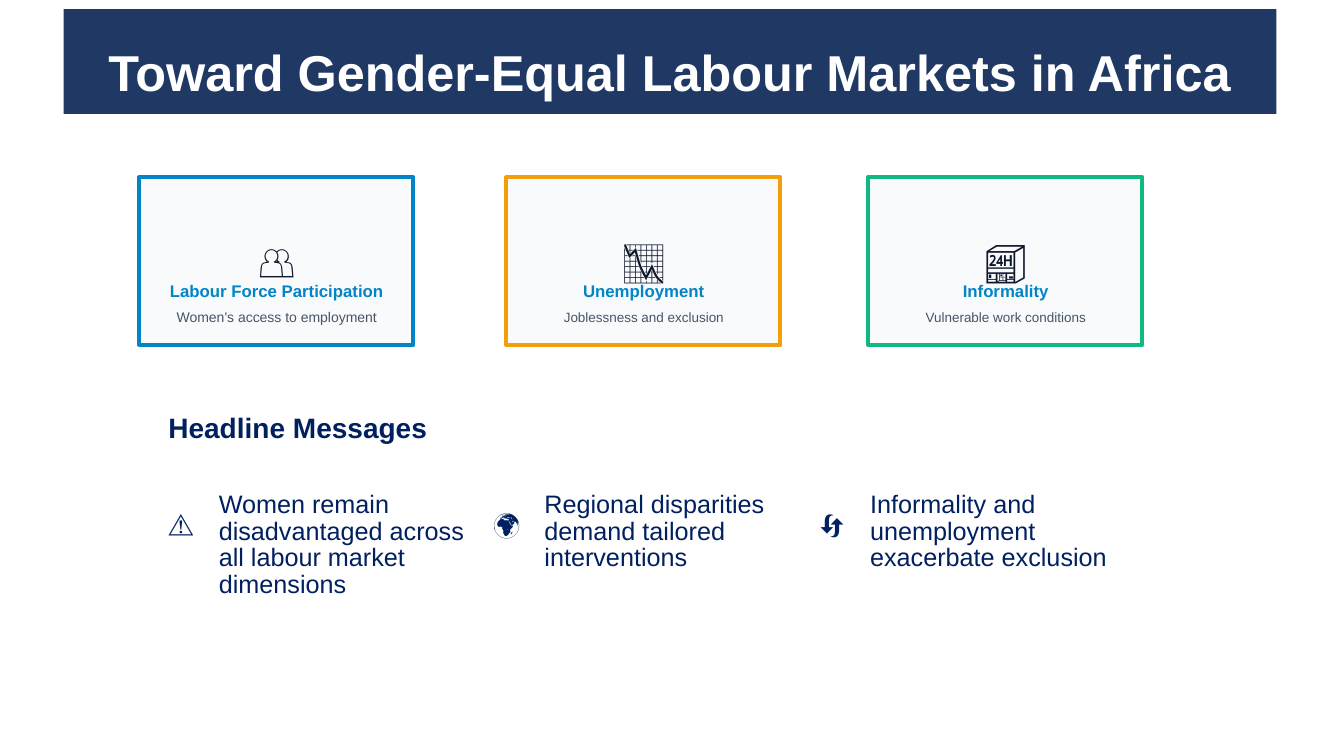
from lxml.etree import SubElement
from pptx import Presentation
from pptx.dml.color import RGBColor
from pptx.enum.shapes import MSO_SHAPE
from pptx.enum.text import MSO_ANCHOR, MSO_AUTO_SIZE, PP_ALIGN
from pptx.oxml.ns import qn
from pptx.util import Emu, Pt

EMU_PER_PX = 9144  # 100 px to the inch
NAVY, SKY, SLATE, INK = "002060", "0284C7", "475569", "0F172A"


def px(length):
    return Emu(length * EMU_PER_PX)


def colour(hex_value):
    return RGBColor.from_string(hex_value)


class SlideBuilder:
    font_name = "Arial"

    def __init__(self, deck):
        self.slide = deck.slides.add_slide(deck.slide_layouts[5])

    def set_text(self, frame, text, size, hue, leading, bold=False,
                 align=PP_ALIGN.LEFT, inset=0, anchor=MSO_ANCHOR.TOP):
        margins = {f"margin_{side}": px(inset) for side in ("left", "top", "right", "bottom")}
        frame.text = text
        paragraph = frame.paragraphs[0]
        formats = (
            (frame, {"word_wrap": True, "auto_size": MSO_AUTO_SIZE.NONE,
                     "vertical_anchor": anchor, **margins}),
            (paragraph, {"alignment": align, "line_spacing": Pt(leading)}),
            (paragraph.runs[0].font, {"name": self.font_name, "size": Pt(size), "bold": bold}),
        )
        for target, values in formats:
            for attribute, value in values.items():
                setattr(target, attribute, value)
        paragraph.runs[0].font.color.rgb = colour(hue)

    def title(self, text, box, fill):
        banner = self.slide.shapes.title
        for attribute, value in zip(("left", "top", "width", "height"), box):
            setattr(banner, attribute, px(value))
        outline = SubElement(banner.element.spPr, qn("a:prstGeom"), prst="roundRect")
        SubElement(outline, qn("a:avLst"))
        banner.fill.solid()
        banner.fill.fore_color.rgb = colour(fill)
        self.set_text(banner.text_frame, text, 36, "FFFFFF", 57.6, bold=True,
                      align=PP_ALIGN.CENTER, inset=10, anchor=MSO_ANCHOR.MIDDLE)

    def panel(self, box, fill, border):
        panel = self.slide.shapes.add_shape(MSO_SHAPE.RECTANGLE, *map(px, box))
        panel.shadow.inherit = False
        panel.fill.solid()
        panel.fill.fore_color.rgb = colour(fill)
        panel.line.color.rgb = colour(border)
        panel.line.width = Pt(3)

    def label(self, text, box, size, hue, leading, **style):
        frame = self.slide.shapes.add_textbox(*map(px, box)).text_frame
        self.set_text(frame, text, size, hue, leading, **style)


def main():
    deck = Presentation()
    deck.slide_width, deck.slide_height = px(1333), px(750)
    page = SlideBuilder(deck)

    # Title banner
    page.title("Toward Gender-Equal Labour Markets in Africa", (63, 9, 1203, 104), "203864")

    # Topic cards
    topics = (
        (138, "0284C7", "👥", "Labour Force Participation", "Women's access to employment", 10),
        (502, "F59E0B", "📉", "Unemployment", "Joblessness and exclusion", 9.6),
        (861, "10B981", "🏪", "Informality", "Vulnerable work conditions", 9.6),
    )
    for left, border, icon, topic, detail, detail_size in topics:
        page.panel((left, 176, 272, 166), "F8FAFC", border)
        lines = (
            (icon, 205, 58, 30, INK, 56, False),
            (topic, 272, 20, 12, SKY, 19.2, True),
            (detail, 300, 17, detail_size, SLATE, 16.6, False),
        )
        for text, top, height, size, hue, leading, bold in lines:
            page.label(text, (left + 23, top, 227, height), size, hue, leading,
                       bold=bold, align=PP_ALIGN.CENTER)

    # Headline messages
    page.label("Headline Messages", (167, 411, 960, 44), 20, NAVY, 21.1, bold=True)
    messages = (
        ("⚠️", "Women remain disadvantaged across all labour market dimensions", 118),
        ("🌍", "Regional disparities demand tailored interventions", 79),
        ("🔄", "Informality and unemployment exacerbate exclusion", 79),
    )
    for column, (icon, message, height) in enumerate(messages):
        left = 167 + 323 * column
        page.label(icon, (left, 488, 41, 69), 18, NAVY, 33.6)
        page.label(message, (left + 50, 488, 244, height), 18, NAVY, 19)

    deck.save("out.pptx")


if __name__ == "__main__":
    main()
